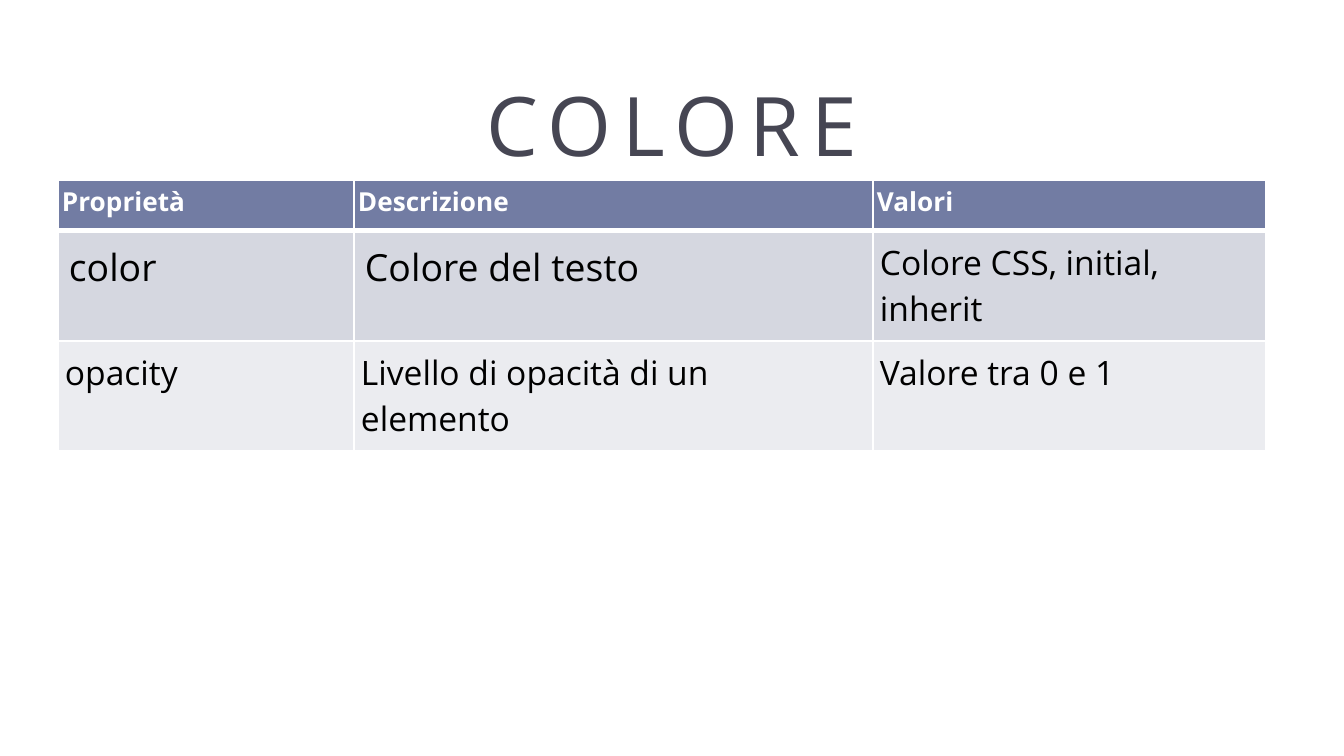
from lxml import etree
from pptx import Presentation
from pptx.dml.color import RGBColor
from pptx.enum.text import MSO_ANCHOR, PP_ALIGN
from pptx.oxml.ns import qn
from pptx.util import Pt

MIDDLE = MSO_ANCHOR.MIDDLE
CENTER = PP_ALIGN.CENTER
SCALE = 914400 / 134.4
FONT = "Open Sans"
COLORS = {
    "title": "464653",
    "head": "727CA3",
    "odd": "D5D7E0",
    "even": "EBECF0",
    "white": "FFFFFF",
    "black": "000000",
}


def px(n):
    return round(n * SCALE)


def write(frame, text, size, color, bold=False):
    run = frame.paragraphs[0].add_run()
    run.text = text
    style = {"name": FONT, "size": Pt(size), "bold": bold}
    for key, value in style.items():
        setattr(run.font, key, value)
    run.font.color.rgb = RGBColor.from_string(COLORS[color])
    return run


deck = Presentation()
deck.slide_width, deck.slide_height = px(1344), px(756)
slide = deck.slides.add_slide(deck.slide_layouts[6])

# Title
box = slide.shapes.add_textbox(px(67), px(60), px(1210), px(127))
frame = box.text_frame
frame.word_wrap = True
frame.vertical_anchor = MIDDLE
frame.paragraphs[0].alignment = CENTER
run = write(frame, "COLORE", 44, "title")
run._r.get_or_add_rPr().set("spc", "600")

# Table grid
widths = [296, 519, 393]
heights = [51, 110, 110]
table = slide.shapes.add_table(
    3, 3, px(58), px(180), px(sum(widths)), px(sum(heights))
).table
for col, width in zip(table.columns, widths):
    col.width = px(width)
for row, height in zip(table.rows, heights):
    row.height = px(height)

# Cell text: size, side inset, top and bottom inset
HEAD, LARGE, BODY = (14, 4, 4), (20, 11, 11), (18, 7, 9)
rows = [
    ("head", "white", [("Proprietà", HEAD), ("Descrizione", HEAD),
                       ("Valori", HEAD)]),
    ("odd", "black", [("color", LARGE), ("Colore del testo", LARGE),
                      ("Colore CSS, initial, inherit", BODY)]),
    ("even", "black", [("opacity", BODY),
                       ("Livello di opacità di un elemento", BODY),
                       ("Valore tra 0 e 1", BODY)]),
]
for r, (fill, ink, cells) in enumerate(rows):
    for c, (text, (size, side, edge)) in enumerate(cells):
        cell = table.cell(r, c)
        write(cell.text_frame, text, size, ink, bold=r == 0)
        cell.margin_left = cell.margin_right = px(side)
        cell.margin_top = cell.margin_bottom = px(edge)

        # White borders, thick below the header
        props = cell._tc.get_or_add_tcPr()
        for tag in ("lnL", "lnR", "lnT", "lnB"):
            thick = (r, tag) in ((0, "lnB"), (1, "lnT"))
            line = etree.SubElement(props, qn("a:" + tag))
            line.set("w", str(Pt(3 if thick else 1)))
            solid = etree.SubElement(line, qn("a:solidFill"))
            etree.SubElement(solid, qn("a:srgbClr")).set("val", COLORS["white"])

        cell.fill.solid()
        cell.fill.fore_color.rgb = RGBColor.from_string(COLORS[fill])

deck.save("out.pptx")
